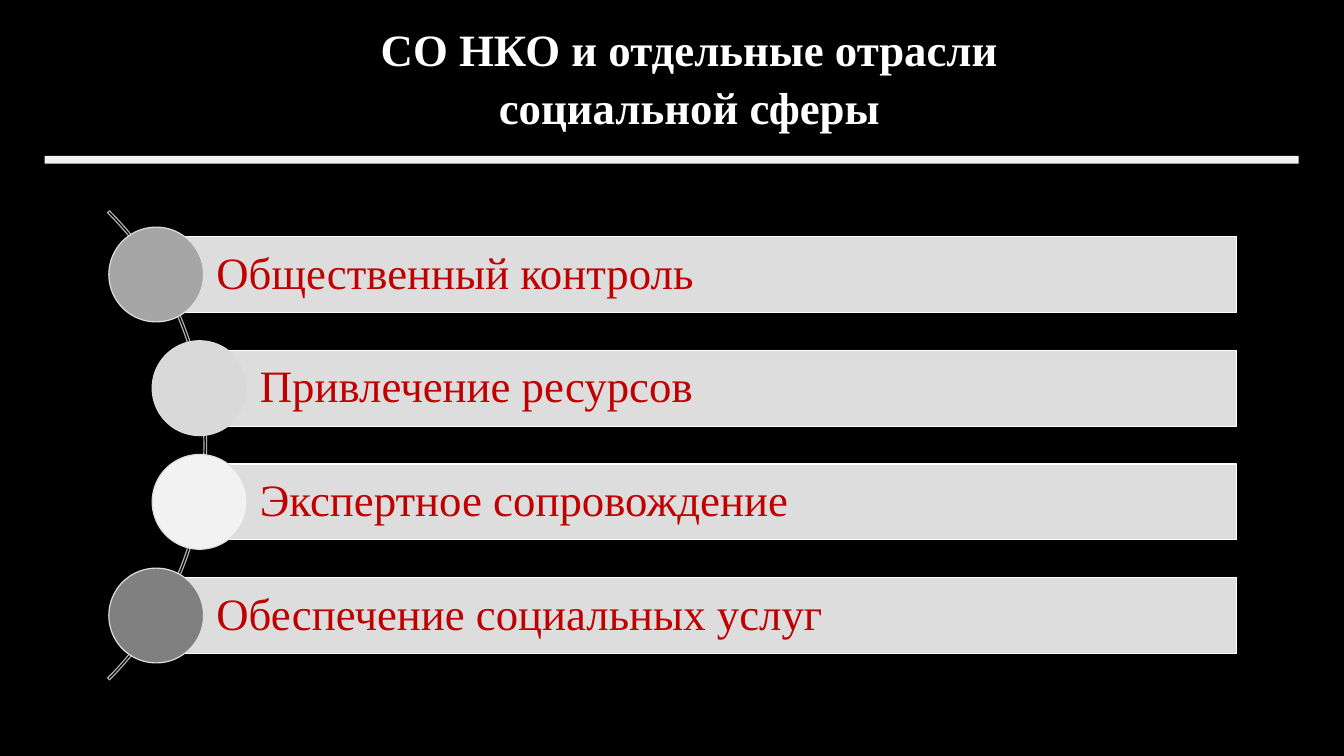
from dataclasses import dataclass

from pptx import Presentation
from pptx.dml.color import RGBColor
from pptx.enum import shapes, text
from pptx.util import Pt


@dataclass(frozen=True)
class Theme:
    font: str = "Times New Roman"
    size: float = 32
    background: str = "000000"
    title: str = "FFFFFF"
    rule: str = "F2F2F2"
    label: str = "C00000"
    bar: str = "DDDDDD"
    bar_line: str = "FFFFFF"
    disc_line: str = "DDDDDD"
    arc_line: str = "B1B1B1"
    line_width: float = 0.85


class SlideBuilder:
    def __init__(self, prs, theme):
        self.theme = theme
        self.slide = prs.slides.add_slide(prs.slide_layouts[5])
        fill = self.slide.background.fill
        fill.solid()
        fill.fore_color.rgb = RGBColor.from_string(theme.background)

    def add_run(self, p, words, color, bold=False):
        r = p.add_run()
        r.text = words
        r.font.name = self.theme.font
        r.font.size = Pt(self.theme.size)
        r.font.bold = bold
        r.font.color.rgb = RGBColor.from_string(color)

    def title(self, words, left, top, width, height):
        sp = self.slide.shapes.title
        sp.left, sp.top, sp.width, sp.height = map(Pt, (left, top, width, height))
        tf = sp.text_frame
        tf.word_wrap = True
        tf.auto_size = text.MSO_AUTO_SIZE.NONE
        tf.vertical_anchor = text.MSO_ANCHOR.TOP
        p = tf.paragraphs[0]
        p.alignment = text.PP_ALIGN.CENTER
        p.line_spacing = 1.07
        self.add_run(p, words, self.theme.title, bold=True)

    def shape(self, kind, left, top, width, height, fill=None, line=None):
        """Add a preset shape; no fill or no line where the colour is None."""
        sp = self.slide.shapes.add_shape(kind, *map(Pt, (left, top, width, height)))
        sp.shadow.inherit = False
        if fill:
            sp.fill.solid()
            sp.fill.fore_color.rgb = RGBColor.from_string(fill)
        else:
            sp.fill.background()
        if line:
            sp.line.color.rgb = RGBColor.from_string(line)
            sp.line.width = Pt(self.theme.line_width)
        else:
            sp.line.fill.background()
        return sp

    def rule(self, left, top, width, height):
        self.shape(shapes.MSO_SHAPE.RECTANGLE, left, top, width, height, self.theme.rule)

    def arc(self, left, top, diameter):
        sp = self.shape(shapes.MSO_SHAPE.BLOCK_ARC, left, top, diameter, diameter,
                        line=self.theme.arc_line)
        for i, value in enumerate((189, 27, 0.004)):
            sp.adjustments[i] = value

    def bar(self, words, left, top, width, height):
        sp = self.shape(shapes.MSO_SHAPE.RECTANGLE, left, top, width, height,
                        self.theme.bar, self.theme.bar_line)
        tf = sp.text_frame
        tf.word_wrap = True
        tf.vertical_anchor = text.MSO_ANCHOR.MIDDLE
        tf.margin_left = Pt(43)
        tf.margin_top = tf.margin_right = tf.margin_bottom = Pt(6.4)
        p = tf.paragraphs[0]
        p.alignment = text.PP_ALIGN.LEFT
        p.line_spacing = 0.9
        self.add_run(p, words, self.theme.label)

    def disc(self, center_x, center_y, diameter, fill):
        self.shape(shapes.MSO_SHAPE.OVAL, center_x - diameter / 2,
                   center_y - diameter / 2, diameter, diameter,
                   fill, self.theme.disc_line)


OUTER_X, INNER_X = 111.6, 142.6
ROWS = [
    ("Общественный контроль", OUTER_X, "A6A6A6"),
    ("Привлечение ресурсов", INNER_X, "D9D9D9"),
    ("Экспертное сопровождение", INNER_X, "F2F2F2"),
    ("Обеспечение социальных услуг", OUTER_X, "808080"),
]
FIRST_Y, ROW_STEP = 196.1, 81.2
BAR_RIGHT, BAR_HEIGHT = 883.2, 54.2
DISC = 67.7


def main():
    prs = Presentation()
    prs.slide_width, prs.slide_height = Pt(960), Pt(540)
    s = SlideBuilder(prs, Theme())
    s.title("СО НКО и отдельные отрасли социальной сферы", 252.7, 9.4, 479.5, 96)
    s.arc(-326.2, 81.2, 473.8)
    for i, (words, x, color) in enumerate(ROWS):
        y = FIRST_Y + i * ROW_STEP
        s.bar(words, x, y - BAR_HEIGHT / 2, BAR_RIGHT - x, BAR_HEIGHT)
        s.disc(x, y, DISC, color)
    s.rule(31.9, 111.4, 895.8, 5.6)
    prs.save("out.pptx")


if __name__ == "__main__":
    main()
